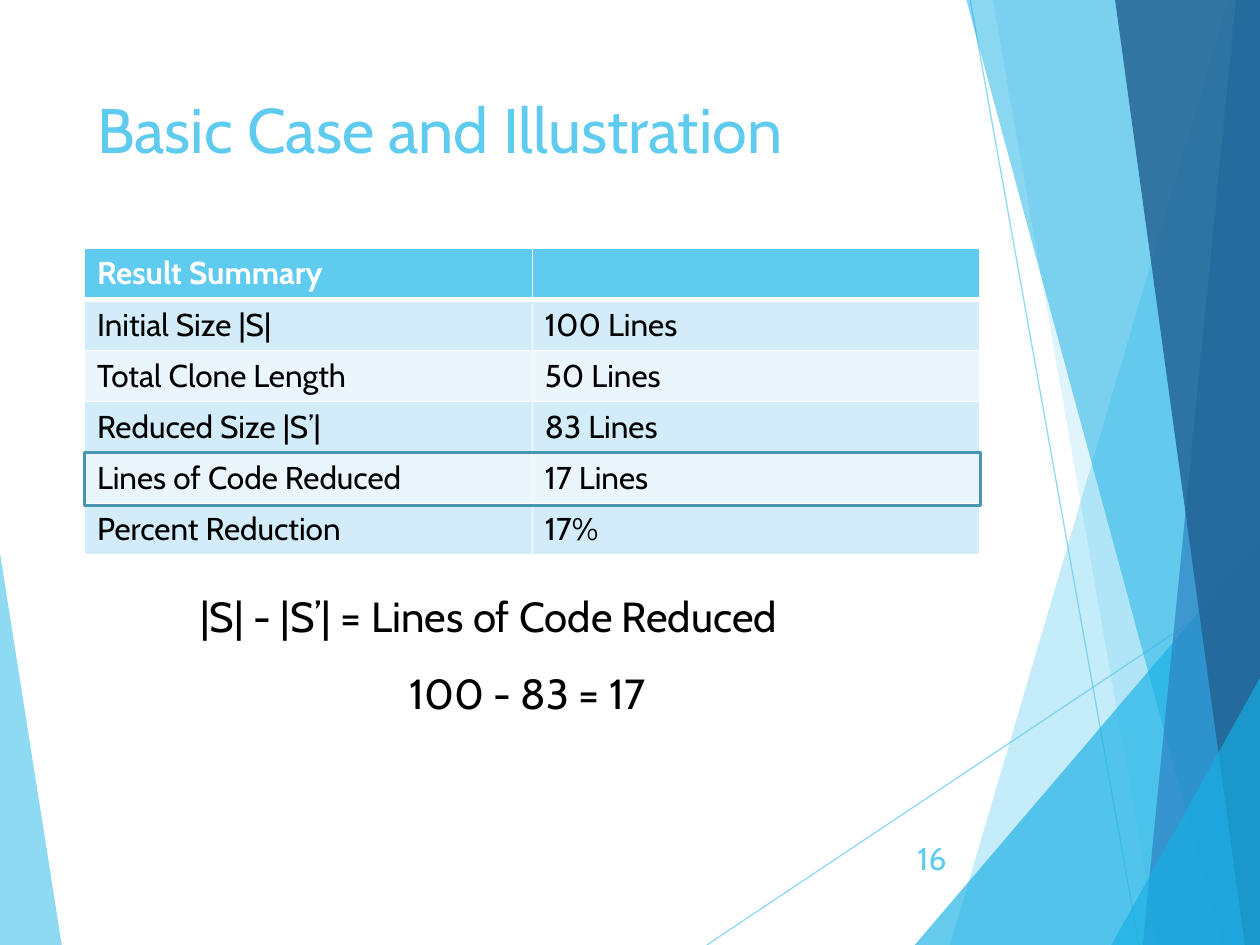
from lxml.etree import SubElement as Sub
from pptx import Presentation
from pptx.dml.color import RGBColor as Rgb
from pptx.enum.shapes import MSO_CONNECTOR as Conn, MSO_SHAPE as Shape
from pptx.enum.text import MSO_ANCHOR as Anchor, PP_ALIGN as Align
from pptx.oxml.ns import qn
from pptx.util import Inches, Pt

FONT = "Cabin"
HEX = {"sky": "5FCBEF", "cyan": "17B0E4", "blue": "2E83C3", "navy": "226292",
       "edge": "4696B1", "band": "D2ECF9", "pale": "EAF6FC",
       "white": "FFFFFF", "black": "000000"}
WIDE, HIGH = 10, 7.5

TITLE = "Basic Case and Illustration"
ROWS = [("Result Summary", ""),
        ("Initial Size |S|", "100 Lines"),
        ("Total Clone Length", "50 Lines"),
        ("Reduced Size |S’|", "83 Lines"),
        ("Lines of Code Reduced", "17 Lines"),
        ("Percent Reduction", "17%")]
SUMS = [("|S| - |S’| = Lines of Code Reduced", (1.49, 4.64, 5.48, 0.5)),
        ("100 - 83 = 17", (3.15, 5.25, 2.15, 0.5))]
PAGE = "16"

LEFT = [("sky", 70, [(0, 4.39), (0.49, HIGH), (0, HIGH)])]
RAYS = [((5.61, HIGH), (WIDE, 4.57)), ((7.7, 0), (9.04, HIGH))]


def slab(top, foot):
    """Return a band that runs from a slanted side to the right edge."""
    return [(top, 0), (foot, HIGH), (WIDE, HIGH), (WIDE, 0)]


def wedge(foot, rise):
    """Return a triangle in the lower right corner."""
    return [(foot, HIGH), (WIDE, rise), (WIDE, HIGH)]


RIGHT = [("sky", 36, slab(9.75, 7.54)),
         ("sky", 20, slab(7.88, 9.19)),
         ("cyan", 66, wedge(7.26, 4.29)),
         ("cyan", 50, slab(7.67, 9.7)),
         ("blue", 70, slab(9.81, 9.07)),
         ("navy", 82, slab(8.85, 9.88)),
         ("cyan", 66, wedge(8.82, 5.38))]


def paint(fill, name, alpha=100):
    """Set a solid fill with an opacity in percent."""
    fill.solid()
    fill.fore_color.rgb = Rgb.from_string(HEX[name])
    if alpha < 100:
        node = fill._xPr.find(qn("a:solidFill"))[0]
        Sub(node, qn("a:alpha"), val=str(alpha * 1000))


def write(frame, text, size, name, bold=False, align=Align.LEFT):
    """Put one formatted line of text in a frame."""
    frame.text = text
    para = frame.paragraphs[0]
    para.alignment = align
    for font in [para.font] + [run.font for run in para.runs]:
        font.name, font.size, font.bold = FONT, Pt(size), bold
        font.color.rgb = Rgb.from_string(HEX[name])


def label(slide, text, box, size, name, **style):
    """Add a text box on one line."""
    frame = slide.shapes.add_textbox(*map(Inches, box)).text_frame
    frame.word_wrap = False
    write(frame, text, size, name, **style)
    return frame


def draw(slide, facets):
    """Draw filled outlines from back to front."""
    for name, alpha, points in facets:
        spots = [tuple(map(Inches, spot)) for spot in points]
        pen = slide.shapes.build_freeform(*spots[0])
        pen.add_line_segments(spots[1:])
        form = pen.convert_to_shape()
        form.shadow.inherit = False
        paint(form.fill, name, alpha)
        form.line.fill.background()


def rule(slide, start, end):
    """Draw a thin translucent line."""
    line = slide.shapes.add_connector(Conn.STRAIGHT, *map(Inches, start + end))
    line.line.width = Pt(0.75)
    paint(line.line.fill, "sky", 70)
    Sub(line._element.spPr, qn("a:effectLst"))


def border(cell, row):
    """Set white cell borders, thicker under the header."""
    props = cell._tc.get_or_add_tcPr()
    thick = {(0, "B"), (1, "T")}
    for side in "LRTB":
        width = Pt(3 if (row, side) in thick else 1)
        line = Sub(props, qn("a:ln" + side), w=str(width))
        fill = Sub(line, qn("a:solidFill"))
        Sub(fill, qn("a:srgbClr"), val=HEX["white"])


def grid(slide, left, top, width, step):
    """Add the result table and frame the key row."""
    area = map(Inches, (left, top, width, step * len(ROWS)))
    table = slide.shapes.add_table(len(ROWS), 2, *area).table
    for r, texts in enumerate(ROWS):
        table.rows[r].height = Inches(step)
        head = r == 0
        shade = "sky" if head else ("pale", "band")[r % 2]
        for c, text in enumerate(texts):
            cell = table.cell(r, c)
            border(cell, r)
            paint(cell.fill, shade)
            write(cell.text_frame, text, 18, "white" if head else "black", head)
    spot = map(Inches, (left, top + 4 * step, width, 0.42))
    mark = slide.shapes.add_shape(Shape.RECTANGLE, *spot)
    mark.shadow.inherit = False
    mark.fill.background()
    mark.line.width = Pt(1.5)
    paint(mark.line.fill, "edge")


def main():
    """Build the slide and save it."""
    deck = Presentation()
    deck.slide_width, deck.slide_height = Inches(WIDE), Inches(HIGH)
    slide = deck.slides.add_slide(deck.slide_layouts[5])
    draw(slide, LEFT)
    for start, end in RAYS:
        rule(slide, start, end)
    draw(slide, RIGHT)

    title = slide.shapes.title
    title.left, title.top, title.width, title.height = map(
        Inches, (0.67, 0.67, 6.94, 1.44))
    title.text_frame.vertical_anchor = Anchor.TOP
    write(title.text_frame, TITLE, 36, "sky")

    grid(slide, 0.67, 1.97, 7.11, 0.405)
    page = label(slide, PAGE, (7.05, 6.61, 0.56, 0.4), 18, "sky", align=Align.RIGHT)
    page.word_wrap = True
    page.vertical_anchor = Anchor.MIDDLE
    for text, box in SUMS:
        label(slide, text, box, 24, "black")
    deck.save("out.pptx")


if __name__ == "__main__":
    main()
